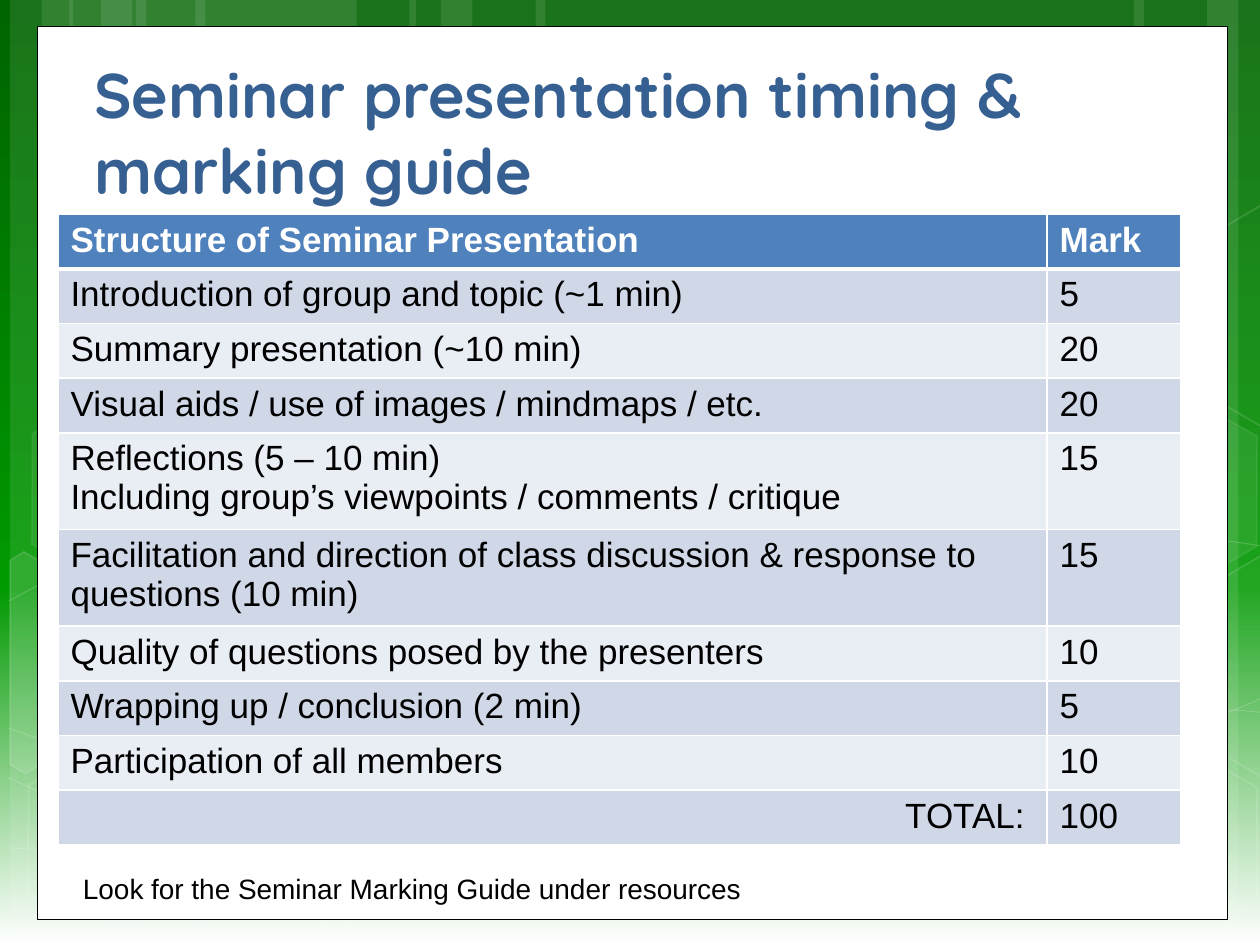
from lxml import etree
from pptx import Presentation
from pptx.dml.color import RGBColor
from pptx.enum.shapes import MSO_SHAPE
from pptx.enum.text import MSO_ANCHOR, PP_ALIGN
from pptx.oxml import parse_xml
from pptx.oxml.ns import nsdecls, qn
from pptx.util import Inches, Pt

RECT, HEXAGON = MSO_SHAPE.RECTANGLE, MSO_SHAPE.HEXAGON
BOTTOM, TOP = MSO_ANCHOR.BOTTOM, MSO_ANCHOR.TOP
LEFT, RIGHT = PP_ALIGN.LEFT, PP_ALIGN.RIGHT
W, H = 10, 7.5
WHITE, BLACK, BLUE = "FFFFFF", "000000", "4F81BD"
BANDS = ("D0D8E8", "E9EDF4")

# Content
TITLE = "Seminar presentation timing & marking guide"
NOTE = "Look for the Seminar Marking Guide under resources"
ROWS = [
    ("Structure of Seminar Presentation", "Mark"),
    ("Introduction of group and topic (~1 min)", "5"),
    ("Summary presentation (~10 min)", "20"),
    ("Visual aids / use of images / mindmaps / etc.", "20"),
    ("Reflections (5 – 10 min)\nIncluding group’s viewpoints / comments / critique", "15"),
    ("Facilitation and direction of class discussion & response to questions (10 min)", "15"),
    ("Quality of questions posed by the presenters", "10"),
    ("Wrapping up / conclusion (2 min)", "5"),
    ("Participation of all members", "10"),
    ("TOTAL: ", "100"),
]
COLS = (7.85, 1.06)
ROW_H, TABLE_H = 0.41, 5  # rows grow with their text

# Backdrop: gradient stops, full-height bars, curves, hexagons
STOPS = [(0, "006400"), (62, "009900"), (100, WHITE)]
BARS = [(1.08, 1.75), (0.08, 0.5), (0.33, 0.83), (1.55, 1.75), (0.55, 0.5), (0.8, 0.83),
        (7.33, 1.75), (9.58, 0.5), (9, 0.83), (4.25, 3.08), (3.25, 0.5), (3.5, 0.83)]
CURVES = [  # start point, then groups of two controls and an end point
    [(0.07, 6.73), (0.61, 6.76), (1.15, 6.79), (1.9, 6.78), (2.65, 6.77), (3.58, 6.75), (4.58, 6.65),
     (5.58, 6.55), (7, 6.36), (7.92, 6.17), (8.83, 5.98), (9.77, 5.68), (10.07, 5.51)],
    [(0.07, 4.77), (0.36, 4.61), (0.65, 4.46), (1.21, 4.31), (1.78, 4.16), (2.59, 3.94), (3.47, 3.87),
     (4.36, 3.8), (5.44, 3.79), (6.54, 3.87), (7.64, 3.95), (9.47, 4.26), (10.07, 4.34)],
    [(0.06, 6.17), (1.27, 6.72), (2.47, 7.27), (3.34, 7.49)],
    [(0.07, 5.78), (0.38, 5.89), (0.7, 6), (1.28, 6.16), (1.86, 6.31), (2.73, 6.56), (3.57, 6.73),
     (4.4, 6.9), (5.45, 7.08), (6.28, 7.18), (7.11, 7.29), (8, 7.33), (8.53, 7.36),
     (9.05, 7.4), (9.19, 7.38), (9.45, 7.38), (9.71, 7.37), (9.89, 7.35), (10.07, 7.34)],
    [(2.42, 7.49), (2.6, 7.29), (2.78, 7.09), (3.02, 6.91), (3.26, 6.73), (3.6, 6.53), (3.88, 6.39),
     (4.16, 6.25), (4.33, 6.19), (4.7, 6.09), (5.06, 5.99), (5.73, 5.85), (6.08, 5.78),
     (6.44, 5.71), (6.49, 5.71), (6.8, 5.69), (7.11, 5.66), (7.6, 5.63), (7.94, 5.62),
     (8.29, 5.61), (8.86, 5.62), (8.86, 5.62), (9.08, 5.62), (9.31, 5.62), (9.53, 5.62),
     (9.71, 5.63), (9.88, 5.64), (9.97, 5.65), (10.06, 5.66), (10.03, 5.65), (10.06, 5.66)],
]
HEXAGONS = [  # left, top, fill opacity, line opacity
    (3.34, 0.36, 4, 8), (4.97, 5.89, 6, 12), (0.11, 5.91, 0, 12), (0.14, 3.12, 7, 8),
    (1.74, 5.92, 0, 12), (8.34, 5.93, 0, 12), (8.34, 3.14, 7, 8)]
CUT_HEXAGONS = [  # outline, fill opacity
    ([(0.08, 4.45), (0.19, 4.38), (0.96, 4.82), (0.95, 5.7), (0.2, 6.14), (0.08, 6.07)], 10),
    ([(9.26, 4.85), (10.01, 4.41), (10.09, 4.46), (10.09, 6.13), (10.02, 6.17), (9.26, 5.73)], 4),
    ([(9.26, 2.07), (10.01, 1.63), (10.1, 1.68), (10.09, 3.35), (10.02, 3.39), (9.26, 2.95)], 0)]


def rgb(color):
    return RGBColor.from_string(color)


def paint(fill, color, alpha):
    if not alpha:
        fill.background()
        return
    fill.solid()
    fill.fore_color.rgb = rgb(color)
    if alpha < 100:
        clr = fill._xPr.find(qn("a:solidFill"))[0]
        etree.SubElement(clr, qn("a:alpha"), val=str(alpha * 1000))


def style(sp, alpha=100, line=WHITE, width=1, line_alpha=100):
    sp.shadow.inherit = False
    paint(sp.fill, WHITE, alpha)
    paint(sp.line.fill, line, line_alpha)
    if line_alpha:
        sp.line.width = Pt(width)


def add_box(s, kind, x, y, w, h, **look):
    sp = s.shapes.add_shape(kind, Inches(x), Inches(y), Inches(w), Inches(h))
    style(sp, **look)
    return sp


def add_outline(s, points, close, **look):
    pts = [(Inches(x), Inches(y)) for x, y in points]
    fb = s.shapes.build_freeform(*pts[0])
    fb.add_line_segments(pts[1:], close=close)
    sp = fb.convert_to_shape()
    style(sp, **look)
    return sp


def bend(sp):
    """Turn every three line segments into one cubic curve."""
    outline = next(sp._element.iter(qn("a:path")))
    lines = outline.findall(qn("a:lnTo"))
    for i in range(0, len(lines), 3):
        curve = etree.SubElement(outline, qn("a:cubicBezTo"))
        for line in lines[i:i + 3]:
            curve.append(line[0])
            outline.remove(line)


def put_text(tf, text, size=20, font="Arial", color=BLACK, bold=False, align=LEFT):
    for i, line in enumerate(text.split("\n")):
        p = tf.add_paragraph() if i else tf.paragraphs[0]
        p.alignment = align
        r = p.add_run()
        r.text = line
        r.font.size, r.font.name, r.font.bold = Pt(size), font, bold
        r.font.color.rgb = rgb(color)


def add_text(s, x, y, w, h, text, wrap=True, anchor=TOP, **fmt):
    tf = s.shapes.add_textbox(Inches(x), Inches(y), Inches(w), Inches(h)).text_frame
    tf.word_wrap, tf.vertical_anchor = wrap, anchor
    put_text(tf, text, **fmt)


def set_borders(cell, **widths):
    tc_pr = cell._tc.get_or_add_tcPr()
    for i, side in enumerate("LRTB"):
        tc_pr.insert(i, parse_xml(
            f'<a:ln{side} {nsdecls("a")} w="{Pt(widths.get(side, 1))}"><a:solidFill>'
            f'<a:srgbClr val="{WHITE}"/></a:solidFill></a:ln{side}>'))


def add_backdrop(s):
    stops = "".join(f'<a:gs pos="{pos * 1000}"><a:srgbClr val="{c}"/></a:gs>' for pos, c in STOPS)
    s._element.cSld.insert(0, parse_xml(
        f'<p:bg {nsdecls("p", "a")}><p:bgPr><a:gradFill><a:gsLst>{stops}</a:gsLst>'
        '<a:lin ang="5400000" scaled="0"/></a:gradFill><a:effectLst/></p:bgPr></p:bg>'))
    for x, w in BARS:
        add_box(s, RECT, x, 0, w, H, alpha=10, line_alpha=0)
    for points in CURVES:
        bend(add_outline(s, points, False, alpha=0, width=0.5, line_alpha=20))
    for x, y, alpha, line_alpha in HEXAGONS:
        sp = add_box(s, HEXAGON, x, y, 1.75, 1.52, alpha=alpha, line_alpha=line_alpha)
        sp.adjustments[0] = 0.285
        sp.rotation = 30
    for points, alpha in CUT_HEXAGONS:
        add_outline(s, points, True, alpha=alpha, line_alpha=12)


def add_marks_table(s):
    frame = s.shapes.add_table(len(ROWS), len(COLS), Inches(0.46), Inches(1.7),
                               Inches(sum(COLS)), Inches(TABLE_H))
    table = frame.table
    for col, w in zip(table.columns, COLS):
        col.width = Inches(w)
    for i, row in enumerate(ROWS):
        table.rows[i].height = Inches(ROW_H)
        head, last = i == 0, i == len(ROWS) - 1
        for j, text in enumerate(row):
            cell = table.cell(i, j)
            put_text(cell.text_frame, text, bold=head, color=WHITE if head else BLACK,
                     align=RIGHT if last and j == 0 else LEFT)
            paint(cell.fill, BLUE if head else BANDS[(i - 1) % 2], 100)
            set_borders(cell, T=3 if i == 1 else 1, B=3 if head else 1)
    frame.height = Inches(TABLE_H)


def main():
    prs = Presentation()
    prs.slide_width, prs.slide_height = Inches(W), Inches(H)
    s = prs.slides.add_slide(prs.slide_layouts[6])
    add_backdrop(s)
    # White panel with title, table and note
    add_box(s, RECT, 0.3, 0.21, 9.44, 7.09, line=BLACK, width=0.5)
    add_text(s, 0.65, 0.44, 7.68, 1.25, TITLE, anchor=BOTTOM, size=36,
             font="Quicksand", color="376092", bold=True)
    add_marks_table(s)
    add_text(s, 0.56, 6.87, 5.49, 0.37, NOTE, wrap=False, size=16)
    prs.save("out.pptx")


if __name__ == "__main__":
    main()
